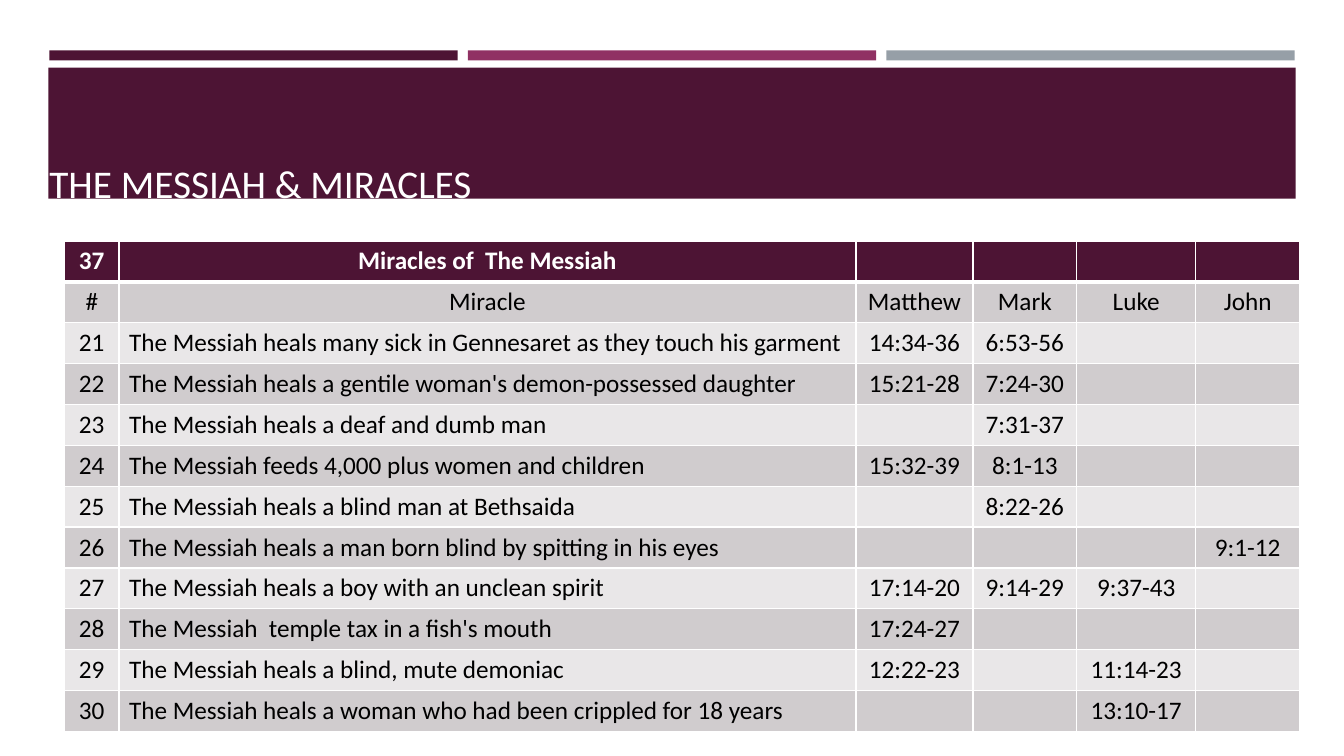
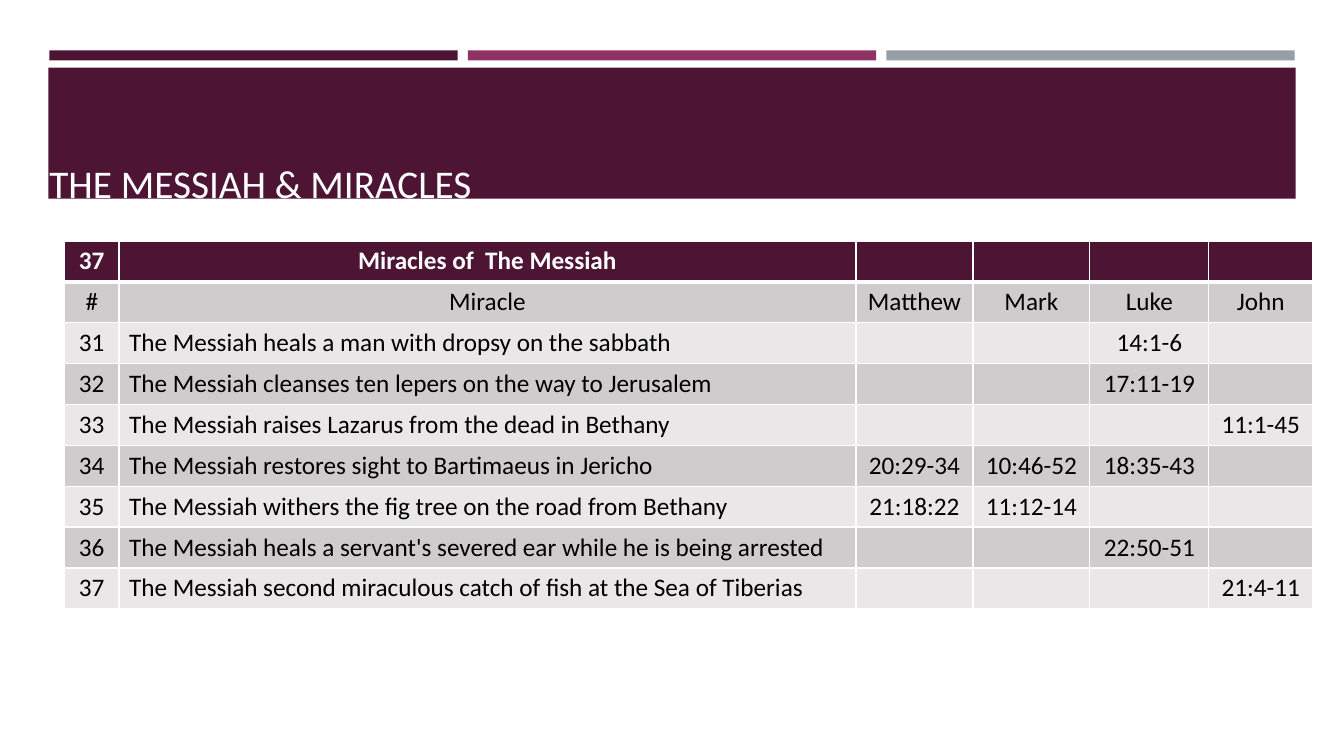
import lxml.etree
import pptx
import pptx.dml.color
import pptx.enum.shapes
import pptx.enum.text
import pptx.oxml.ns
import pptx.util

Inches = pptx.util.Inches
RGBColor = pptx.dml.color.RGBColor
Align = pptx.enum.text.PP_ALIGN

PLUM = RGBColor(0x4D, 0x14, 0x34)
MAGENTA = RGBColor(0x90, 0x31, 0x63)
SLATE = RGBColor(0x96, 0x9F, 0xA7)
DARK_ROW = RGBColor(0xD0, 0xCC, 0xCE)
LIGHT_ROW = RGBColor(0xE9, 0xE7, 0xE8)
WHITE = RGBColor(0xFF, 0xFF, 0xFF)
BLACK = RGBColor(0x00, 0x00, 0x00)

TITLE = "THE MESSIAH & MIRACLES"
CAPTION_ROW = ("37", "Miracles of  The Messiah", "", "", "", "")
HEADING_ROW = ("#", "Miracle", "Matthew", "Mark", "Luke", "John")

MIRACLES_FROM_21 = [
    ("The Messiah heals many sick in Gennesaret as they touch his garment", "14:34-36", "6:53-56", "", ""),
    ("The Messiah heals a gentile woman's demon-possessed daughter", "15:21-28", "7:24-30", "", ""),
    ("The Messiah heals a deaf and dumb man", "", "7:31-37", "", ""),
    ("The Messiah feeds 4,000 plus women and children", "15:32-39", "8:1-13", "", ""),
    ("The Messiah heals a blind man at Bethsaida", "", "8:22-26", "", ""),
    ("The Messiah heals a man born blind by spitting in his eyes", "", "", "", "9:1-12"),
    ("The Messiah heals a boy with an unclean spirit", "17:14-20", "9:14-29", "9:37-43", ""),
    ("The Messiah  temple tax in a fish's mouth", "17:24-27", "", "", ""),
    ("The Messiah heals a blind, mute demoniac", "12:22-23", "", "11:14-23", ""),
    ("The Messiah heals a woman who had been crippled for 18 years", "", "", "13:10-17", ""),
]
MIRACLES_FROM_31 = [
    ("The Messiah heals a man with dropsy on the sabbath", "", "", "14:1-6", ""),
    ("The Messiah cleanses ten lepers on the way to Jerusalem", "", "", "17:11-19", ""),
    ("The Messiah raises Lazarus from the dead in Bethany", "", "", "", "11:1-45"),
    ("The Messiah restores sight to Bartimaeus in Jericho", "20:29-34", "10:46-52", "18:35-43", ""),
    ("The Messiah withers the fig tree on the road from Bethany", "21:18:22", "11:12-14", "", ""),
    ("The Messiah heals a servant's severed ear while he is being arrested", "", "", "22:50-51", ""),
    ("The Messiah second miraculous catch of fish at the Sea of Tiberias", "", "", "", "21:4-11"),
]


class MiracleDeck:
    font_name = "Calibri"
    title_size = pptx.util.Pt(28)
    table_size = pptx.util.Pt(18)
    row_height = Inches(3.65) // 9

    def __init__(self):
        self.deck = pptx.Presentation()
        self.deck.slide_width = Inches(13.33)
        self.deck.slide_height = Inches(7.5)
        self.layout = self.deck.slide_layouts.get_by_name("Title Only")
        self.slide = None

    def add_slide(self, title):
        is_first = self.slide is None
        self.slide = self.deck.slides.add_slide(self.layout)
        if is_first:
            self.add_bands()
        self.add_title(title)

    def add_bands(self):
        for index, color in enumerate((PLUM, MAGENTA, SLATE)):
            self.add_layout_band(0.49 + 4.15 * index, 0.5, 4.05, 0.1, color)
        self.add_layout_band(0.48, 0.67, 12.37, 1.3, PLUM)

    def add_layout_band(self, left, top, width, height, color):
        """Draw a band, then hand it to the layout so every slide shows it."""
        band = self.slide.shapes.add_shape(
            pptx.enum.shapes.MSO_SHAPE.RECTANGLE,
            Inches(left), Inches(top), Inches(width), Inches(height))
        band.shadow.inherit = False
        band.fill.solid()
        band.fill.fore_color.rgb = color
        band.line.fill.background()
        next_id = max(shape.shape_id for shape in self.layout.shapes) + 1
        band.element.nvSpPr.cNvPr.set("id", str(next_id))
        self.layout.shapes.element.append(band.element)

    def add_text(self, para, text, size, color, bold=False):
        span = para.add_run()
        span.text = text
        span.font.name = self.font_name
        span.font.size = size
        span.font.color.rgb = color
        span.font.bold = bold

    def add_title(self, text):
        box = self.slide.shapes.title
        box.left, box.top = Inches(0.39), Inches(0.97)
        box.width, box.height = Inches(12.06), Inches(1.11)
        frame = box.text_frame
        frame.word_wrap = True
        frame.margin_bottom = Inches(0.03)
        frame.vertical_anchor = pptx.enum.text.MSO_ANCHOR.BOTTOM
        para = frame.paragraphs[0]
        para.alignment = Align.LEFT
        self.add_text(para, text, self.title_size, WHITE)

    def add_miracle_table(self, first_number, miracles, column_widths):
        rows = [CAPTION_ROW, HEADING_ROW]
        rows += [(str(number), *miracle) for number, miracle in enumerate(miracles, first_number)]
        table = self.slide.shapes.add_table(
            len(rows), len(column_widths), Inches(0.64), Inches(2.39),
            Inches(sum(column_widths)), self.row_height * len(rows)).table
        table.horz_banding = False
        for column, width in zip(table.columns, column_widths):
            column.width = Inches(width)
        for row_index, row in enumerate(rows):
            for column_index, text in enumerate(row):
                self.fill_cell(table.cell(row_index, column_index), text, row_index, column_index)

    def fill_cell(self, cell, text, row_index, column_index):
        is_caption = row_index == 0
        cell.fill.solid()
        if is_caption:
            cell.fill.fore_color.rgb = PLUM
        else:
            cell.fill.fore_color.rgb = DARK_ROW if row_index % 2 else LIGHT_ROW
        self.add_borders(cell, top=3 if row_index == 1 else 1, bottom=3 if is_caption else 1)
        para = cell.text_frame.paragraphs[0]
        is_miracle = row_index > 1 and column_index == 1
        para.alignment = Align.LEFT if is_miracle else Align.CENTER
        para.font.size = self.table_size
        if text:
            self.add_text(para, text, self.table_size, WHITE if is_caption else BLACK, is_caption)

    def add_borders(self, cell, top, bottom):
        """Line the cell in white; top and bottom are widths in points."""
        qn = pptx.oxml.ns.qn
        properties = cell._tc.get_or_add_tcPr()
        sides = (("a:lnL", 1), ("a:lnR", 1), ("a:lnT", top), ("a:lnB", bottom))
        for index, (tag, width) in enumerate(sides):
            line = lxml.etree.Element(qn(tag), w=str(pptx.util.Pt(width)))
            fill = lxml.etree.SubElement(line, qn("a:solidFill"))
            lxml.etree.SubElement(fill, qn("a:srgbClr"), val=str(WHITE))
            properties.insert(index, line)


def main():
    builder = MiracleDeck()
    builder.add_slide(TITLE)
    builder.add_miracle_table(21, MIRACLES_FROM_21, (0.54, 7.31, 1.16, 1.03, 1.18, 1.03))
    builder.add_slide(TITLE)
    builder.add_miracle_table(31, MIRACLES_FROM_31, (0.54, 7.31, 1.16, 1.16, 1.18, 1.03))
    builder.deck.save("out.pptx")


if __name__ == "__main__":
    main()
